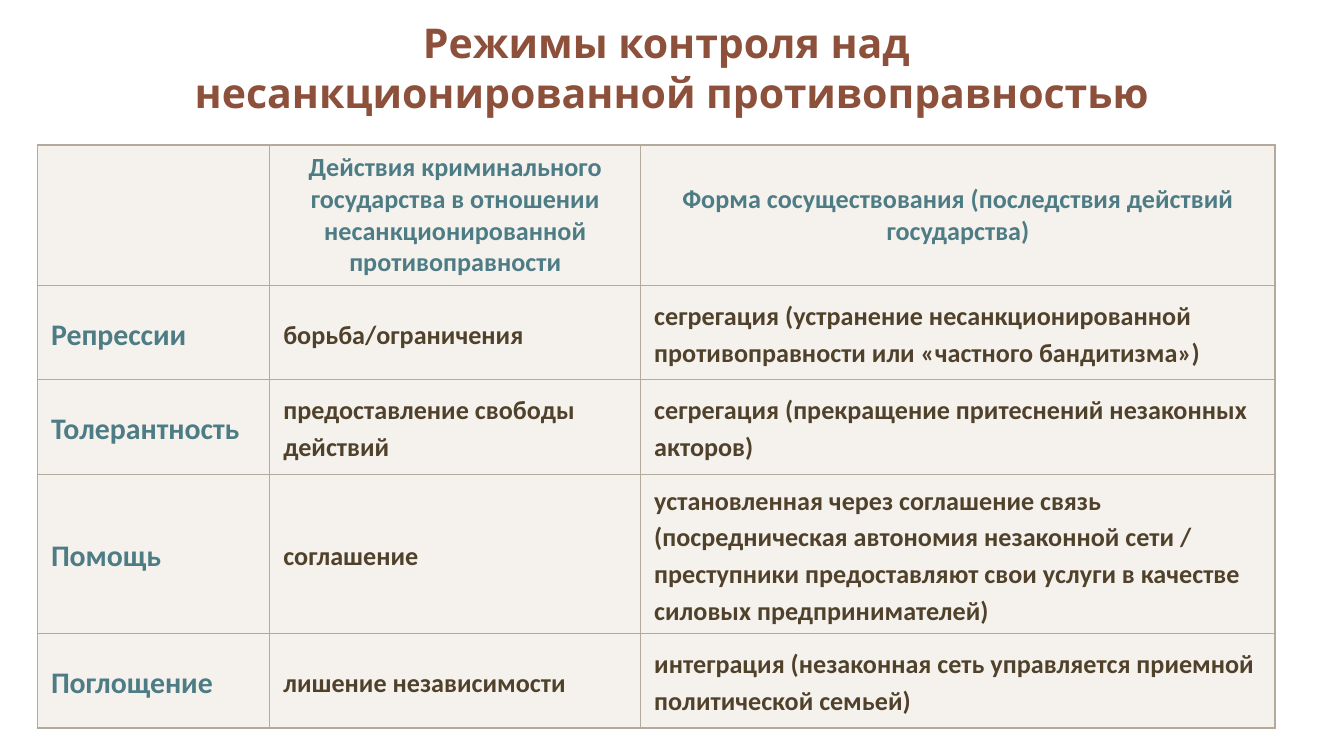
from lxml import etree
from pptx import Presentation
from pptx import util as u
from pptx.dml.color import RGBColor
from pptx.enum import text
from pptx.oxml.ns import qn

BROWN, TEAL, DARK = "8D503B", "4D7C85", "50412B"
BORDER, CELL_FILL = "B3A99D", "EFEAE4"
COLUMN_WIDTHS = [4.39, 7.01, 11.99]
ROW_HEIGHTS = [2.64, 1.78, 1.78, 3.02, 1.78]
TITLE_LINES = ["Режимы контроля над ", "несанкционированной противоправностью"]
ROWS = [
    ["",
     "Действия криминального государства в отношении несанкционированной противоправности",
     "Форма сосуществования (последствия действий государства)"],
    ["Репрессии", "борьба/ограничения",
     "сегрегация (устранение несанкционированной противоправности или «частного бандитизма»)"],
    ["Толерантность", "предоставление свободы действий",
     "сегрегация (прекращение притеснений незаконных акторов)"],
    ["Помощь", "соглашение",
     "установленная через соглашение связь (посредническая автономия незаконной сети / "
     "преступники предоставляют свои услуги в качестве силовых предпринимателей)"],
    ["Поглощение", "лишение независимости",
     "интеграция (незаконная сеть управляется приемной политической семьей)"],
]


def color(value):
    return RGBColor.from_string(value)


def style_font(para, name, size, value):
    para.font.name = name
    para.font.size = u.Pt(size)
    para.font.bold = True
    para.font.color.rgb = color(value)


def add_title(page):
    box = page.shapes.title
    box.left, box.top, box.width, box.height = u.Cm(0.3), u.Cm(0), u.Cm(24.79), u.Cm(2.54)
    frame = box.text_frame
    frame.auto_size = text.MSO_AUTO_SIZE.NONE
    frame.vertical_anchor = text.MSO_ANCHOR.MIDDLE
    para = frame.paragraphs[0]
    para.alignment = text.PP_ALIGN.CENTER
    style_font(para, "Open Sans", 22, BROWN)
    para.add_run().text = TITLE_LINES[0]
    para.add_line_break()
    para.add_run().text = TITLE_LINES[1]


def fill_cell(cell):
    cell.fill.solid()
    cell.fill.fore_color.rgb = color(CELL_FILL)
    shade = cell._tc.tcPr.find(f".//{qn('a:srgbClr')}")
    etree.SubElement(shade, qn("a:alpha"), val="60000")


def border_cell(cell, outer_sides):
    properties = cell._tc.tcPr
    for position, side in enumerate("LRTB"):
        width = u.Pt(1 if side in outer_sides else 0.5)
        line = etree.Element(qn(f"a:ln{side}"), w=str(int(width)))
        fill = etree.SubElement(line, qn("a:solidFill"))
        etree.SubElement(fill, qn("a:srgbClr"), val=BORDER)
        properties.insert(position, line)


def write_cell(cell, content, row, column):
    cell.vertical_anchor = text.MSO_ANCHOR.MIDDLE
    cell.text = content
    para = cell.text_frame.paragraphs[0]
    if row == 0:
        para.alignment = text.PP_ALIGN.CENTER
    else:
        para.line_spacing = 1.15
        para.space_after = u.Pt(10 if row > 1 or column == 2 else 0)
    is_row_label = row > 0 and column == 0
    style_font(para, "Calibri", 16 if is_row_label else 14,
               TEAL if row == 0 or column == 0 else DARK)


def add_regime_table(page):
    frame = page.shapes.add_table(len(ROWS), len(COLUMN_WIDTHS), u.Cm(0.71), u.Cm(2.74),
                                  u.Cm(sum(COLUMN_WIDTHS)), u.Cm(sum(ROW_HEIGHTS)))
    table = frame.table
    table.first_row = table.horz_banding = False
    for column, width in zip(table.columns, COLUMN_WIDTHS):
        column.width = u.Cm(width)
    for row, height in zip(table.rows, ROW_HEIGHTS):
        row.height = u.Cm(height)
    last_row, last_column = len(ROWS) - 1, len(COLUMN_WIDTHS) - 1
    for row, contents in enumerate(ROWS):
        for column, content in enumerate(contents):
            cell = table.cell(row, column)
            edges = {"L": column == 0, "R": column == last_column,
                     "T": row == 0, "B": row == last_row}
            write_cell(cell, content, row, column)
            fill_cell(cell)
            border_cell(cell, [side for side, outer in edges.items() if outer])


def main():
    deck = Presentation()
    deck.slide_width, deck.slide_height = u.Cm(25.4), u.Cm(14.29)
    page = deck.slides.add_slide(deck.slide_layouts[5])
    add_title(page)
    add_regime_table(page)
    deck.save("out.pptx")


if __name__ == "__main__":
    main()
